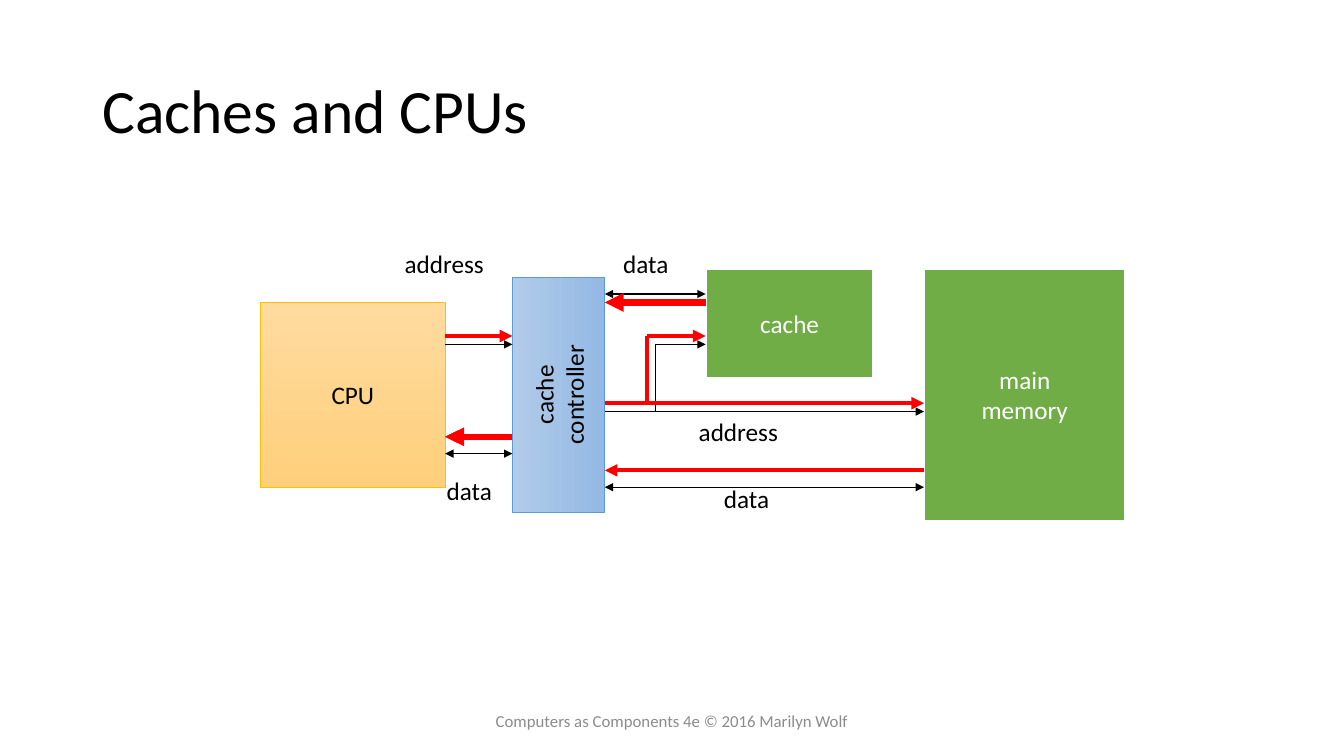
from dataclasses import dataclass
from typing import NamedTuple

from lxml import etree
from pptx import Presentation
from pptx import util as u
from pptx.dml.color import RGBColor
from pptx.enum import shapes, text
from pptx.oxml import ns


@dataclass(frozen=True)
class Theme:
    font: str = "Calibri"
    ink: str = "000000"
    paper: str = "FFFFFF"
    muted: str = "8C8C8C"
    signal: str = "FF0000"
    memory: str = "70AD47"
    cpu_fill: tuple[str, str] = ("FFDB9E", "FFD07C")
    cpu_line: str = "FFC000"
    controller_fill: tuple[str, str] = ("B1CBE9", "93B9E4")
    controller_line: str = "5B9BD5"
    title_size: float = 44
    body_size: float = 18
    footer_size: float = 12


THEME = Theme()
CELL = u.Inches(1) / 12  # the slide is a grid of 160 columns by 90 rows
COLUMNS, ROWS = 160, 90


class Area(NamedTuple):
    column: float
    row: float
    columns: float
    rows: float


@dataclass(frozen=True)
class Block:
    area: Area
    lines: tuple[str, ...]
    fill: tuple[str, ...]
    outline: str
    outline_width: float = 0.5
    color: str = THEME.ink
    rotation: float = 0


@dataclass(frozen=True)
class Label:
    area: Area
    words: str
    size: float = THEME.body_size
    color: str = THEME.ink
    wrap: bool = True
    grow: bool = True
    align: text.PP_ALIGN = text.PP_ALIGN.LEFT
    line_spacing: float = 1.0


class Wire(NamedTuple):
    start: tuple[float, float]
    end: tuple[float, float]
    width: float = 0.75
    head: bool = False
    tail: bool = True
    color: str = THEME.ink


# Columns where blocks meet the wires
CPU_RIGHT, CONTROLLER_LEFT, CONTROLLER_RIGHT = 53, 61, 72
CACHE_LEFT, MEMORY_LEFT = 84, 110

BLOCKS = [
    Block(Area(31, 36, 22, 22), ("CPU",), THEME.cpu_fill, THEME.cpu_line),
    Block(Area(52.5, 41.5, 28, 11), ("cache", "controller"),
          THEME.controller_fill, THEME.controller_line, rotation=270),
    Block(Area(CACHE_LEFT, 32, 20, 13), ("cache",), (THEME.memory,),
          THEME.paper, 1.5, THEME.paper),
    Block(Area(MEMORY_LEFT, 32, 24, 30), ("main", "memory"), (THEME.memory,),
          THEME.paper, 1.5, THEME.paper),
]


def address_wires(row: float, branch: float, width: float, color: str) -> list[Wire]:
    """Wires from the CPU, and from the controller to memory with a branch to the cache."""
    return [
        Wire((CPU_RIGHT, row), (CONTROLLER_LEFT, row), width, color=color),
        Wire((CONTROLLER_RIGHT, row + 8), (MEMORY_LEFT, row + 8), width, color=color),
        Wire((branch, row + 8), (branch, row), width, tail=False, color=color),
        Wire((branch, row), (CACHE_LEFT, row), width, color=color),
    ]


def data_wire(right: float, left: float, row: float, width: float = 0.75,
              head: bool = True, color: str = THEME.ink) -> Wire:
    return Wire((right, row), (left, row), width, head, color=color)


def red_data(right: float, left: float, row: float, width: float) -> Wire:
    return data_wire(right, left, row, width, False, THEME.signal)


BUSES = address_wires(41, 78, 0.75, THEME.ink) + [
    data_wire(CONTROLLER_LEFT, CPU_RIGHT, 54),
    data_wire(CACHE_LEFT, CONTROLLER_RIGHT, 35),
    data_wire(MEMORY_LEFT, CONTROLLER_RIGHT, 58),
]
TRANSFERS = [
    address_wires(40, 77, 3, THEME.signal),
    [red_data(CACHE_LEFT, CONTROLLER_RIGHT, 36, 4.5),
     red_data(CONTROLLER_LEFT, CPU_RIGHT, 52, 4.5)],
    [red_data(MEMORY_LEFT, CONTROLLER_RIGHT, 56, 3),
     red_data(CONTROLLER_LEFT, CPU_RIGHT, 52, 3)],
]

TITLE = Label(Area(11, 4.8, 138, 17.4), "Caches and CPUs", THEME.title_size,
              grow=False, line_spacing=0.9)
FOOTER = Label(Area(53, 83.4, 54, 4.8), "Computers as Components 4e © 2016 Marilyn Wolf",
               THEME.footer_size, THEME.muted, grow=False, align=text.PP_ALIGN.CENTER)
LABELS = [
    Label(Area(73, 29, 9.1, 4.8), "data"),
    Label(Area(85, 57, 7.9, 4.8), "data", wrap=False),
    Label(Area(82, 49, 12, 4.8), "address", wrap=False),
    Label(Area(52, 56, 9.1, 4.8), "data"),
    Label(Area(47, 29, 12, 4.8), "address", wrap=False),
]


def cells(*counts: float) -> list[u.Emu]:
    return [u.Emu(round(count * CELL)) for count in counts]


def add_run(paragraph, words: str, size: float, color: str) -> None:
    run = paragraph.add_run()
    run.text = words
    run.font.name = THEME.font
    run.font.size = u.Pt(size)
    run.font.color.rgb = RGBColor.from_string(color)


def draw_block(slide, block: Block) -> None:
    shape = slide.shapes.add_shape(shapes.MSO_SHAPE.RECTANGLE, *cells(*block.area))
    shape.shadow.inherit = False
    shape.rotation = block.rotation
    if len(block.fill) == 1:
        shape.fill.solid()
        shape.fill.fore_color.rgb = RGBColor.from_string(block.fill[0])
    else:
        shape.fill.gradient()
        shape.fill.gradient_angle = 270
        for stop, color in zip(shape.fill.gradient_stops, block.fill):
            stop.color.rgb = RGBColor.from_string(color)
    shape.line.color.rgb = RGBColor.from_string(block.outline)
    shape.line.width = u.Pt(block.outline_width)
    frame = shape.text_frame
    frame.word_wrap = False
    frame.vertical_anchor = text.MSO_ANCHOR.MIDDLE
    for index, words in enumerate(block.lines):
        paragraph = frame.add_paragraph() if index else frame.paragraphs[0]
        paragraph.alignment = text.PP_ALIGN.CENTER
        add_run(paragraph, words, THEME.body_size, block.color)


def draw_label(slide, label: Label) -> None:
    frame = slide.shapes.add_textbox(*cells(*label.area)).text_frame
    frame.word_wrap = label.wrap
    if label.grow:
        frame.auto_size = text.MSO_AUTO_SIZE.SHAPE_TO_FIT_TEXT
    else:
        frame.vertical_anchor = text.MSO_ANCHOR.MIDDLE
    paragraph = frame.paragraphs[0]
    paragraph.alignment = label.align
    paragraph.line_spacing = label.line_spacing
    add_run(paragraph, label.words, label.size, label.color)


def draw_wire(container, wire: Wire) -> None:
    connector = container.add_connector(
        shapes.MSO_CONNECTOR.STRAIGHT, *cells(*wire.start, *wire.end))
    connector.line.color.rgb = RGBColor.from_string(wire.color)
    connector.line.width = u.Pt(wire.width)
    outline = connector.line._get_or_add_ln()
    for tag, shown in (("a:headEnd", wire.head), ("a:tailEnd", wire.tail)):
        if shown:
            etree.SubElement(outline, ns.qn(tag), type="triangle")
    etree.SubElement(connector._element.spPr, ns.qn("a:effectLst"))


def main() -> None:
    presentation = Presentation()
    presentation.slide_width, presentation.slide_height = cells(COLUMNS, ROWS)
    slide = presentation.slides.add_slide(presentation.slide_layouts[6])
    draw_label(slide, TITLE)
    for block in BLOCKS:
        draw_block(slide, block)
    for wire in BUSES:
        draw_wire(slide.shapes, wire)
    for label in LABELS:
        draw_label(slide, label)
    for transfer in TRANSFERS:
        group = slide.shapes.add_group_shape()
        for wire in transfer:
            draw_wire(group.shapes, wire)
    draw_label(slide, FOOTER)
    presentation.save("out.pptx")


if __name__ == "__main__":
    main()
